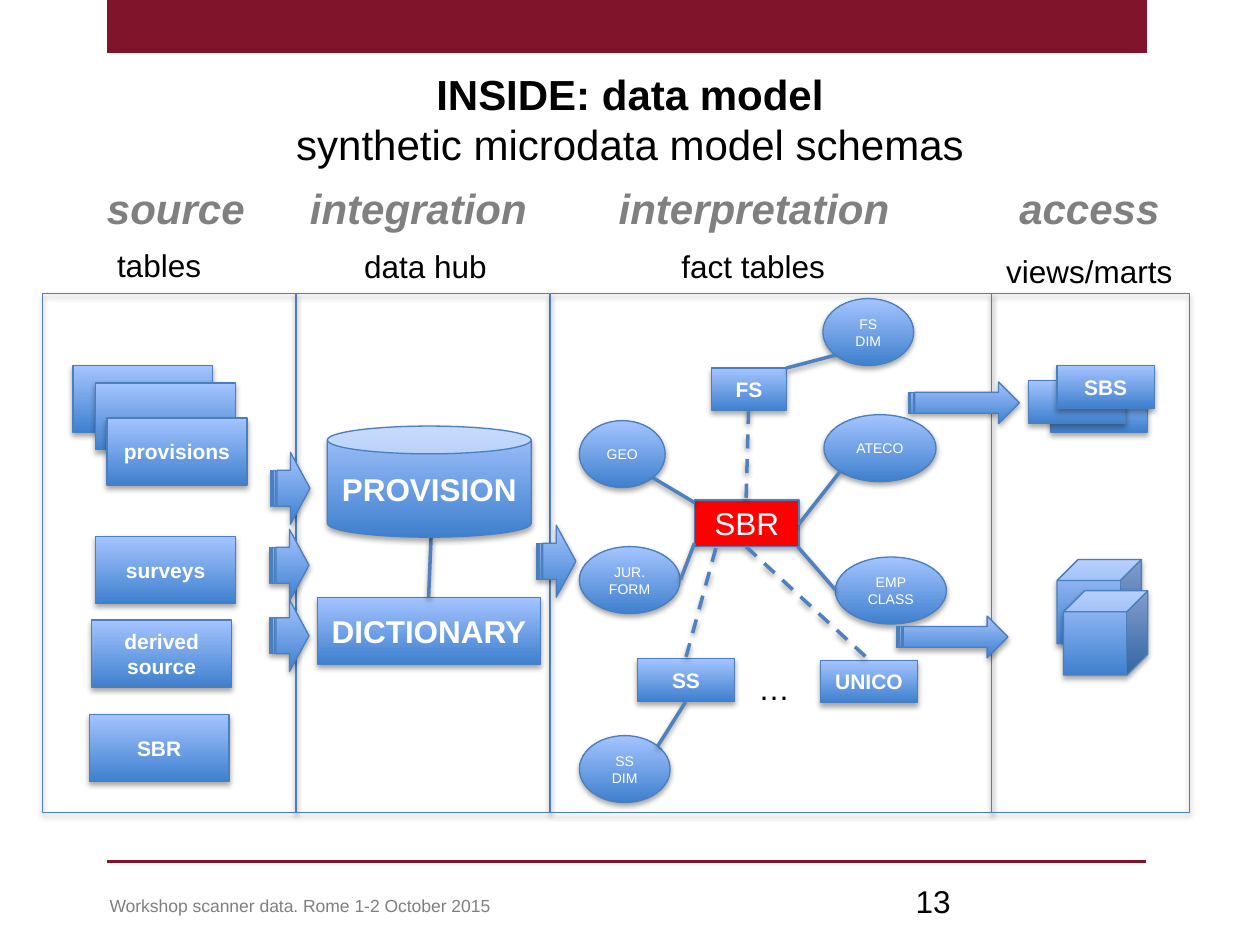
from lxml.etree import SubElement
from pptx import Presentation
from pptx.dml.color import RGBColor
from pptx.enum.dml import MSO_LINE
from pptx.enum.shapes import MSO_CONNECTOR, MSO_SHAPE as Preset
from pptx.enum.text import MSO_ANCHOR as Anchor, PP_ALIGN as Align
from pptx.oxml.ns import qn
from pptx.util import Cm, Pt

COLORS = {
    "brand": "7F142A", "outline": "4B7EBC", "link": "4F81BD", "dark": "3F80CE",
    "light": "A4C4FF", "center": "FF0000", "heading": "808080",
    "footer": "7F7F7F", "black": "000000", "white": "FFFFFF",
}


def rgb(name):
    return RGBColor.from_string(COLORS[name])


def write(paragraph, text, size=18, color="black", bold=False, italic=False):
    run = paragraph.add_run()
    run.text = text
    run.font.name = "Arial"
    run.font.size = Pt(size)
    run.font.bold = bold
    run.font.italic = italic
    run.font.color.rgb = rgb(color)


def set_shadow(shape, distance=23000, alpha=35000):
    """Give the shape a soft shadow straight below it; distance is in EMU."""
    properties = shape._element.spPr
    effects = properties.find(qn("a:effectLst"))
    if effects is None:
        effects = SubElement(properties, qn("a:effectLst"))
    outer = SubElement(effects, qn("a:outerShdw"), blurRad="40000", dist=str(distance),
                       dir="5400000", rotWithShape="0")
    color = SubElement(outer, qn("a:srgbClr"), val=COLORS["black"])
    SubElement(color, qn("a:alpha"), val=str(alpha))


class DiagramSlide:
    def __init__(self, presentation):
        self.slide = presentation.slides.add_slide(presentation.slide_layouts[5])
        self.shapes = self.slide.shapes

    def title(self, first, second, left, top, width, height):
        shape = self.shapes.title
        shape.left, shape.top, shape.width, shape.height = map(Cm, (left, top, width, height))
        shape.text_frame.vertical_anchor = Anchor.MIDDLE
        paragraph = shape.text_frame.paragraphs[0]
        paragraph.alignment = Align.CENTER
        write(paragraph, first, size=24, bold=True)
        paragraph.add_line_break()
        write(paragraph, second, size=24)

    def label(self, text, left, top, width, height=1.02, align=Align.LEFT, wrap=True, **style):
        box = self.shapes.add_textbox(Cm(left), Cm(top), Cm(width), Cm(height))
        box.text_frame.word_wrap = wrap
        paragraph = box.text_frame.paragraphs[0]
        paragraph.alignment = align
        write(paragraph, text, **style)

    def band(self, left, top, width, height):
        shape = self.shapes.add_shape(Preset.RECTANGLE, Cm(left), Cm(top), Cm(width), Cm(height))
        shape.shadow.inherit = False
        shape.fill.solid()
        shape.fill.fore_color.rgb = rgb("brand")
        shape.line.fill.background()

    def outlined(self, preset, left, top, width, height):
        shape = self.shapes.add_shape(preset, Cm(left), Cm(top), Cm(width), Cm(height))
        shape.line.color.rgb = rgb("outline")
        shape.line.width = Pt(0.75)
        shape.shadow.inherit = False
        set_shadow(shape)
        return shape

    def panel(self, left, width):
        self.outlined(Preset.RECTANGLE, left, 5.92, width, 10.46).fill.background()

    def node(self, preset, left, top, width, height, text="", fill=None, size=12, bold=True):
        """Add a shaded shape, or a plain one when a fill is named."""
        shape = self.outlined(preset, left, top, width, height)
        if fill:
            shape.fill.solid()
            shape.fill.fore_color.rgb = rgb(fill)
        else:
            shape.fill.gradient()
            shape.fill.gradient_angle = 90
            for stop, name, position in zip(shape.fill.gradient_stops, ("dark", "light"), (0, 1)):
                stop.color.rgb = rgb(name)
                stop.position = position
        if text:
            frame = shape.text_frame
            frame.word_wrap = True
            frame.vertical_anchor = Anchor.MIDDLE
            frame.paragraphs[0].alignment = Align.CENTER
            write(frame.paragraphs[0], text, size=size, color="white", bold=bold)

    def line(self, x1, y1, x2, y2, color="link", dashed=False, shadow=True):
        connector = self.shapes.add_connector(
            MSO_CONNECTOR.STRAIGHT, Cm(x1), Cm(y1), Cm(x2), Cm(y2))
        connector.line.color.rgb = rgb(color)
        connector.line.width = Pt(2)
        if dashed:
            connector.line.dash_style = MSO_LINE.DASH
        if shadow:
            set_shadow(connector, distance=20000, alpha=38000)
        else:
            SubElement(connector._element.spPr, qn("a:effectLst"))


def add_frame(page):
    page.band(2.16, 0, 20.96, 1.07)
    page.line(2.16, 17.37, 23.11, 17.37, color="brand", shadow=False)
    page.title("INSIDE: data model", "synthetic microdata model schemas", 1.27, 1.24, 22.86, 2.31)
    for text, left, width in (("source", 1.88, 3.33), ("integration", 5.97, 4.93),
                              ("interpretation", 12.19, 6.02), ("access", 20.27, 3.38)):
        page.label(text, left, 3.56, width, 1.27, Align.CENTER, wrap=False,
                   size=24, color="heading", bold=True, italic=True)
    page.label("tables", 2.11, 4.83, 2.64)
    page.label("data hub", 7.09, 4.85, 3.02)
    page.label("fact tables", 11.91, 4.85, 6.55, align=Align.CENTER)
    page.label("views/marts", 19.05, 4.95, 5.82, align=Align.CENTER)
    for left, width in ((0.86, 5.11), (5.97, 5.11), (11.1, 8.89), (19.99, 3.99)):
        page.panel(left, width)
    page.label("13", 18.21, 17.65, 5.92)
    page.label("Workshop scanner data. Rome 1-2 October 2015", 1.96, 17.91, 16.99, 0.69,
               size=10, color="footer")


def add_sources(page):
    for text, left, top in (("", 1.47, 7.37), ("", 1.93, 7.72), ("provisions", 2.16, 8.43),
                            ("SBR", 1.8, 14.4), ("surveys", 1.93, 10.82),
                            ("derived source", 1.85, 12.5)):
        page.node(Preset.RECTANGLE, left, top, 2.82, 1.35, text)


def add_hub(page):
    page.node(Preset.RECTANGLE, 6.4, 12.04, 4.5, 1.35, "DICTIONARY", size=18)
    page.line(8.64, 12.04, 8.69, 10.82)
    page.node(Preset.CAN, 6.6, 8.59, 4.11, 2.24, "PROVISION", size=18)


def add_facts(page):
    page.node(Preset.RECTANGLE, 14, 10.08, 2.11, 0.94, "SBR", fill="center", size=18, bold=False)
    for text, left, top, width in (("FS", 14.35, 7.42, 1.5), ("SS", 12.85, 13.28, 1.96),
                                   ("UNICO", 16.54, 13.31, 1.96)):
        page.node(Preset.RECTANGLE, left, top, width, 0.86, text)
    for text, left, top, width in (
            ("EMP CLASS", 16.84, 11.23, 2.24), ("GEO", 11.68, 8.48, 1.73),
            ("ATECO", 16.61, 8.36, 2.26), ("JUR. FORM", 11.68, 11.02, 2.03),
            ("FS DIM", 16.59, 6.02, 1.83), ("SS DIM", 11.68, 14.83, 1.83)):
        page.node(Preset.FLOWCHART_CONNECTOR, left, top, width, 1.35, text, size=8, bold=False)
    fact_links = ((15.09, 8.26, 15.04, 10.08), (15.04, 11.02, 17.53, 13.31),
                  (14.43, 11.05, 13.82, 13.28))
    dimension_links = ((16.08, 11.02, 16.84, 11.89), (13.16, 9.63, 14, 10.13),
                       (13.72, 11.68, 14, 10.95), (13.26, 15.04, 13.82, 14.15),
                       (15.85, 7.42, 16.84, 7.16), (16.94, 9.5, 16.1, 10.57))
    for ends in fact_links:
        page.line(*ends, dashed=True)
    for ends in dimension_links:
        page.line(*ends)
    page.label("…", 15.04, 13.36, 1.27)


def add_access(page):
    for left, top in ((21.31, 11.28), (21.44, 11.91)):
        page.node(Preset.CUBE, left, top, 1.7, 1.7)
    for text, left, top in (("", 21.18, 7.85), ("", 20.73, 7.67), ("SBS", 21.31, 7.37)):
        page.node(Preset.RECTANGLE, left, top, 1.96, 0.86, text)


def add_flow_arrows(page):
    short, long = (0.79, 1.45), (2.24, 0.84)
    for left, top, size in ((5.46, 9.12, short), (5.44, 10.67, short), (5.44, 12.09, short),
                            (10.82, 10.59, short), (18.31, 7.7, long), (18.08, 12.42, long)):
        page.node(Preset.STRIPED_RIGHT_ARROW, left, top, *size)


def main():
    presentation = Presentation()
    presentation.slide_width, presentation.slide_height = Cm(25.4), Cm(19.05)
    page = DiagramSlide(presentation)
    for add_part in (add_frame, add_sources, add_hub, add_facts, add_access, add_flow_arrows):
        add_part(page)
    presentation.save("out.pptx")


if __name__ == "__main__":
    main()
